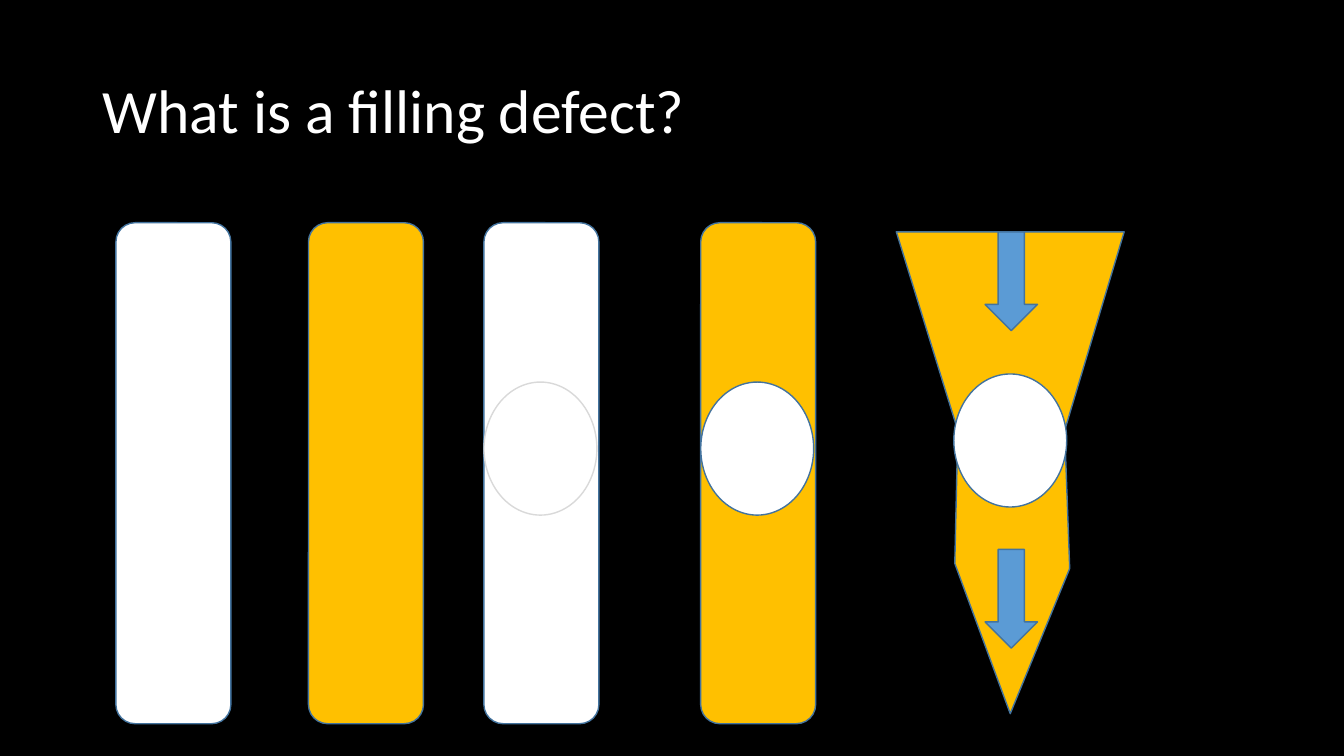
"""Build the slide that explains a filling defect."""
import pptx
import pptx.dml.color
import pptx.enum.shapes
import pptx.enum.text
import pptx.util

Inches = pptx.util.Inches
SHAPE = pptx.enum.shapes.MSO_SHAPE
BLACK, WHITE, GOLD = "000000", "FFFFFF", "FFC000"
BLUE, OUTLINE, GREY = "5B9BD5", "43739E", "D9D9D9"
CLOT_W, CLOT_H = 1.12, 1.32


def rgb(color):
    """Turn a hex string into a colour."""
    return pptx.dml.color.RGBColor.from_string(color)


def paint(sp, fill, line=OUTLINE):
    """Give a shape its fill and outline, without a shadow."""
    sp.shadow.inherit = False
    sp.fill.solid()
    sp.fill.fore_color.rgb = rgb(fill)
    sp.line.color.rgb = rgb(line)
    sp.line.width = pptx.util.Pt(1)


def add_preset(slide, kind, x, y, w, h, fill, line=OUTLINE):
    """Add a painted preset shape."""
    sp = slide.shapes.add_shape(kind, Inches(x), Inches(y), Inches(w), Inches(h))
    paint(sp, fill, line)


def add_text(slide, text, x, y, w, h, size=18, color=WHITE, font="Calibri", spacing=1.0):
    """Add a vertically centred line of text."""
    tf = slide.shapes.add_textbox(Inches(x), Inches(y), Inches(w), Inches(h)).text_frame
    tf.word_wrap = True
    tf.vertical_anchor = pptx.enum.text.MSO_ANCHOR.MIDDLE
    p = tf.paragraphs[0]
    p.line_spacing = spacing
    r = p.add_run()
    r.text = text
    r.font.size = pptx.util.Pt(size)
    r.font.name = font
    r.font.color.rgb = rgb(color)


def add_vessel(slide, x, y, w, h, fill, clot_line=None):
    """Draw a straight vessel, with a clot if its outline colour is given."""
    add_preset(slide, SHAPE.ROUNDED_RECTANGLE, x, y, w, h, fill)
    if clot_line:
        add_preset(slide, SHAPE.OVAL, x, y + 1.58, CLOT_W, CLOT_H, WHITE, clot_line)


def add_narrowing_vessel(slide, x, y):
    """Draw a tapering vessel with a clot and flow arrows."""
    outline = [(2.26, 0), (1.67, 1.97), (1.72, 3.34), (1.13, 4.78),
               (0.58, 3.29), (0.61, 1.97), (0, 0)]
    points = [(Inches(x + dx), Inches(y + dy)) for dx, dy in outline]
    builder = slide.shapes.build_freeform(*points[0])
    builder.add_line_segments(points[1:], close=True)
    paint(builder.convert_to_shape(), GOLD)
    add_preset(slide, SHAPE.OVAL, x + 0.57, y + 1.41, CLOT_W, CLOT_H, WHITE)
    for dy in (0, 3.15):
        add_preset(slide, SHAPE.DOWN_ARROW, x + 0.88, y + dy, 0.52, 0.98, BLUE)


def main():
    """Build and save the slide."""
    prs = pptx.Presentation()
    prs.slide_width, prs.slide_height = Inches(13.33), Inches(7.5)
    slide = prs.slides.add_slide(prs.slide_layouts[6])
    slide.background.fill.solid()
    slide.background.fill.fore_color.rgb = rgb(BLACK)
    add_text(slide, "What is a filling defect?", 0.92, 0.4, 11.5, 1.45, size=44, spacing=0.9)
    vessels = [(1.15, WHITE, None), (3.06, GOLD, None), (4.8, WHITE, GREY), (6.95, GOLD, OUTLINE)]
    for x, fill, clot_line in vessels:
        add_vessel(slide, x, 2.21, 1.14, 4.97, fill, clot_line)
    add_narrowing_vessel(slide, 8.89, 2.3)
    prs.save("out.pptx")


if __name__ == "__main__":
    main()
